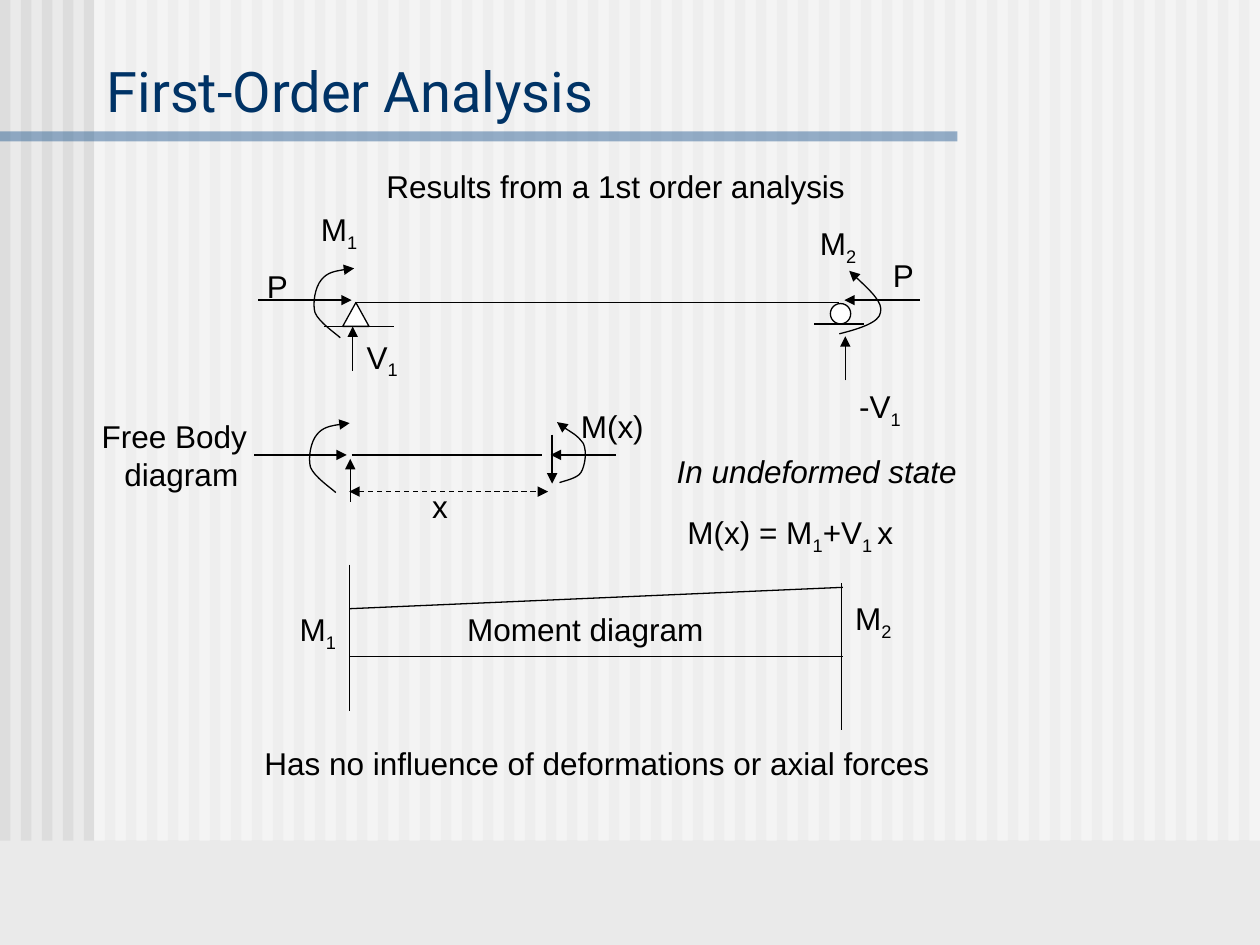
from dataclasses import dataclass

import lxml.etree
import pptx
import pptx.dml.color
import pptx.enum.dml
import pptx.enum.shapes
import pptx.enum.text
import pptx.oxml.ns
import pptx.util

Cm = pptx.util.Cm
qn = pptx.oxml.ns.qn
SHAPES = pptx.enum.shapes.MSO_SHAPE
ALIGN = pptx.enum.text.PP_ALIGN


@dataclass(frozen=True)
class Theme:
    background: str = "EAEAEA"
    stripe: str = "DDDDDD"
    veil: str = "FFFFFF"
    rule: str = "336699"
    title: str = "003366"
    ink: str = "000000"
    paper: str = "FFFFFF"
    title_font: str = "Roboto"
    body_font: str = "Arial"
    title_size: int = 32
    body_size: int = 18
    line_width: float = 0.75


def rgb(color):
    return pptx.dml.color.RGBColor.from_string(color)


class Board:
    """Draws on one slide in one theme; all lengths are centimetres."""

    def __init__(self, slide, theme):
        self.slide = slide
        self.theme = theme
        slide.background.fill.solid()
        slide.background.fill.fore_color.rgb = rgb(theme.background)

    def panel(self, left, top, width, height, color, opacity=100):
        shape = self.symbol(SHAPES.RECTANGLE, left, top, width, height, color)
        shape.line.fill.background()
        if opacity < 100:
            color_element = shape.element.xpath("./p:spPr/a:solidFill/a:srgbClr")[0]
            alpha = lxml.etree.SubElement(color_element, qn("a:alpha"))
            alpha.set("val", str(opacity * 1000))

    def symbol(self, kind, left, top, width, height, color):
        shape = self.slide.shapes.add_shape(kind, Cm(left), Cm(top), Cm(width), Cm(height))
        shape.shadow.inherit = False
        shape.fill.solid()
        shape.fill.fore_color.rgb = rgb(color)
        self.stroke(shape)
        return shape

    def stroke(self, shape, ends=(), dashed=False):
        shape.line.color.rgb = rgb(self.theme.ink)
        shape.line.width = pptx.util.Pt(self.theme.line_width)
        if dashed:
            shape.line.dash_style = pptx.enum.dml.MSO_LINE.DASH
        for end in ends:
            arrowhead = lxml.etree.SubElement(shape.get_or_add_ln(), qn(f"a:{end}"))
            arrowhead.set("type", "triangle")

    def line(self, x1, y1, x2, y2, ends=(), dashed=False):
        connector = self.slide.shapes.add_connector(
            pptx.enum.shapes.MSO_CONNECTOR.STRAIGHT, Cm(x1), Cm(y1), Cm(x2), Cm(y2))
        self.stroke(connector, ends, dashed)
        lxml.etree.SubElement(connector.element.spPr, qn("a:effectLst"))

    def arrow(self, x1, y1, x2, y2):
        self.line(x1, y1, x2, y2, ends=("tailEnd",))

    def curved_arrow(self, points, dx=0, dy=0):
        """Bezier arrow: a start point, then three points for each curve."""
        start, *rest = [(Cm(x + dx), Cm(y + dy)) for x, y in points]
        builder = self.slide.shapes.build_freeform(*start)
        builder.add_line_segments(rest, close=False)
        shape = builder.convert_to_shape()
        shape.shadow.inherit = False
        shape.fill.background()
        outline = shape.element.xpath(".//a:path")[0]
        segments = outline.findall(qn("a:lnTo"))
        for first in range(0, len(segments), 3):
            curve = lxml.etree.SubElement(outline, qn("a:cubicBezTo"))
            for segment in segments[first:first + 3]:
                curve.append(segment[0])
                outline.remove(segment)
        self.stroke(shape, ends=("tailEnd",))

    def text_frame(self, left, top, width, height, wrap=True, inset=True):
        box = self.slide.shapes.add_textbox(Cm(left), Cm(top), Cm(width), Cm(height))
        frame = box.text_frame
        frame.word_wrap = wrap
        if not inset:
            frame.margin_left = frame.margin_right = 0
            frame.margin_top = frame.margin_bottom = 0
        return frame

    def format_run(self, run, italic=False):
        run.font.name = self.theme.body_font
        run.font.size = pptx.util.Pt(self.theme.body_size)
        run.font.color.rgb = rgb(self.theme.ink)
        run.font.italic = italic

    def title(self, text, left, top, width, height):
        frame = self.text_frame(left, top, width, height)
        frame.vertical_anchor = pptx.enum.text.MSO_ANCHOR.BOTTOM
        frame.text = text
        font = frame.paragraphs[0].runs[0].font
        font.name = self.theme.title_font
        font.size = pptx.util.Pt(self.theme.title_size)
        font.color.rgb = rgb(self.theme.title)

    def note(self, text, left, top, width, height=1.02, inset=True, italic=False,
             align=ALIGN.LEFT):
        frame = self.text_frame(left, top, width, height, inset=inset)
        frame.text = text
        for paragraph in frame.paragraphs:
            paragraph.alignment = align
            for run in paragraph.runs:
                self.format_run(run, italic)

    def label(self, text, left, top, width):
        """Unwrapped label; each underscore switches subscript on or off."""
        frame = self.text_frame(left, top, width, 1.02, wrap=False)
        for index, part in enumerate(text.split("_")):
            run = frame.paragraphs[0].add_run()
            run.text = part
            self.format_run(run)
            if index % 2:
                run.font._element.set("baseline", "-25000")


def draw_backdrop(board):
    theme = board.theme
    stripe_count = 60
    for index in range(stripe_count):
        board.panel(index * 25.4 / stripe_count, -2.1, 0.21, 19.05, theme.stripe)
    board.panel(1.9, -2.1, 23.52, 19.05, theme.veil, opacity=50)
    board.panel(0, 2.65, 19.3, 0.2, theme.rule, opacity=50)
    board.title("First-Order Analysis", 1.9, 0.08, 22.68, 2.54)


LEFT_MOMENT = [(6.86, 6.81), (6.78, 6.73), (6.43, 6.5), (6.35, 6.3),
               (6.3, 6.12), (6.35, 5.79), (6.48, 5.64),
               (6.6, 5.49), (6.86, 5.44), (7.14, 5.41)]
RIGHT_MOMENT = [(16.92, 6.73), (17.32, 6.63), (17.73, 6.5), (17.75, 6.3),
                (17.81, 6.1), (17.45, 5.77), (17.12, 5.46)]
CUT_MOMENT = [(11.28, 9.73), (11.35, 9.7), (11.63, 9.65), (11.71, 9.53),
              (11.79, 9.4), (11.84, 9.12), (11.76, 8.94),
              (11.63, 8.76), (11.33, 8.61), (11.23, 8.51)]


def draw_beam(board):
    board.line(7.16, 6.1, 16.92, 6.1)
    board.arrow(5.21, 6.05, 7.09, 6.05)
    board.arrow(18.54, 6.05, 17.02, 6.05)
    board.symbol(SHAPES.ISOSCELES_TRIANGLE, 6.91, 6.1, 0.53, 0.48, board.theme.paper)
    board.symbol(SHAPES.OVAL, 16.74, 6.12, 0.41, 0.41, board.theme.paper)
    board.line(6.53, 6.58, 7.95, 6.58)
    board.line(16.41, 6.53, 17.42, 6.53)
    board.curved_arrow(LEFT_MOMENT)
    board.curved_arrow(RIGHT_MOMENT)
    board.arrow(17.04, 7.67, 17.04, 6.78)
    board.arrow(7.11, 7.47, 7.11, 6.58)
    for text, left, top, width in [
            ("P", 5.13, 5.26, 0.94), ("P", 17.75, 5.03, 0.94),
            ("M_1", 6.22, 4.11, 1.27), ("M_2", 16.28, 4.39, 1.27),
            ("V_1", 7.14, 6.68, 1.17), ("-V_1", 17.07, 7.67, 1.37)]:
        board.label(text, left, top, width)
    board.note("Results from a 1st order analysis", 7.54, 3.25, 9.98)


def draw_free_body(board):
    board.line(7.09, 9.17, 10.92, 9.17)
    board.arrow(12.42, 9.17, 11.1, 9.17)
    board.arrow(11.13, 8.76, 11.13, 9.75)
    board.curved_arrow(CUT_MOMENT)
    board.arrow(5.13, 9.17, 6.99, 9.17)
    board.curved_arrow(LEFT_MOMENT, dx=-0.09, dy=3.12)
    board.arrow(7.06, 10.11, 7.06, 9.25)
    board.line(7.04, 9.91, 11.05, 9.91, ends=("headEnd", "tailEnd"), dashed=True)
    board.label("M(x)", 11.46, 8.08, 1.78)
    board.label("x", 8.46, 9.7, 0.84)
    board.note("Free Body\ndiagram ", 1.42, 8.41, 3.56, 1.52, inset=False, align=ALIGN.RIGHT)
    board.note("In undeformed state", 13.64, 9.12, 7.85, 0.76, inset=False, italic=True)
    board.label("M(x) = M_1_+V_1 _x", 13.61, 10.21, 4.72)


def draw_moment_diagram(board):
    board.line(7.04, 11.38, 7.04, 14.33)
    board.line(16.97, 11.76, 16.97, 14.71)
    board.line(7.06, 13.23, 16.99, 13.23)
    board.line(7.06, 12.27, 16.99, 11.84)
    board.label("M_1", 5.79, 12.17, 1.27)
    board.label("M_2", 16.99, 11.96, 1.27)
    board.note("Moment diagram", 9.17, 12.17, 5.46)
    board.note("Has no influence of deformations or axial forces", 5.08, 14.88, 14.12)


def main():
    presentation = pptx.Presentation()
    presentation.slide_width, presentation.slide_height = Cm(25.4), Cm(19.05)
    slide = presentation.slides.add_slide(presentation.slide_layouts[6])
    board = Board(slide, Theme())
    draw_backdrop(board)
    draw_beam(board)
    draw_free_body(board)
    draw_moment_diagram(board)
    presentation.save("out.pptx")


if __name__ == "__main__":
    main()
